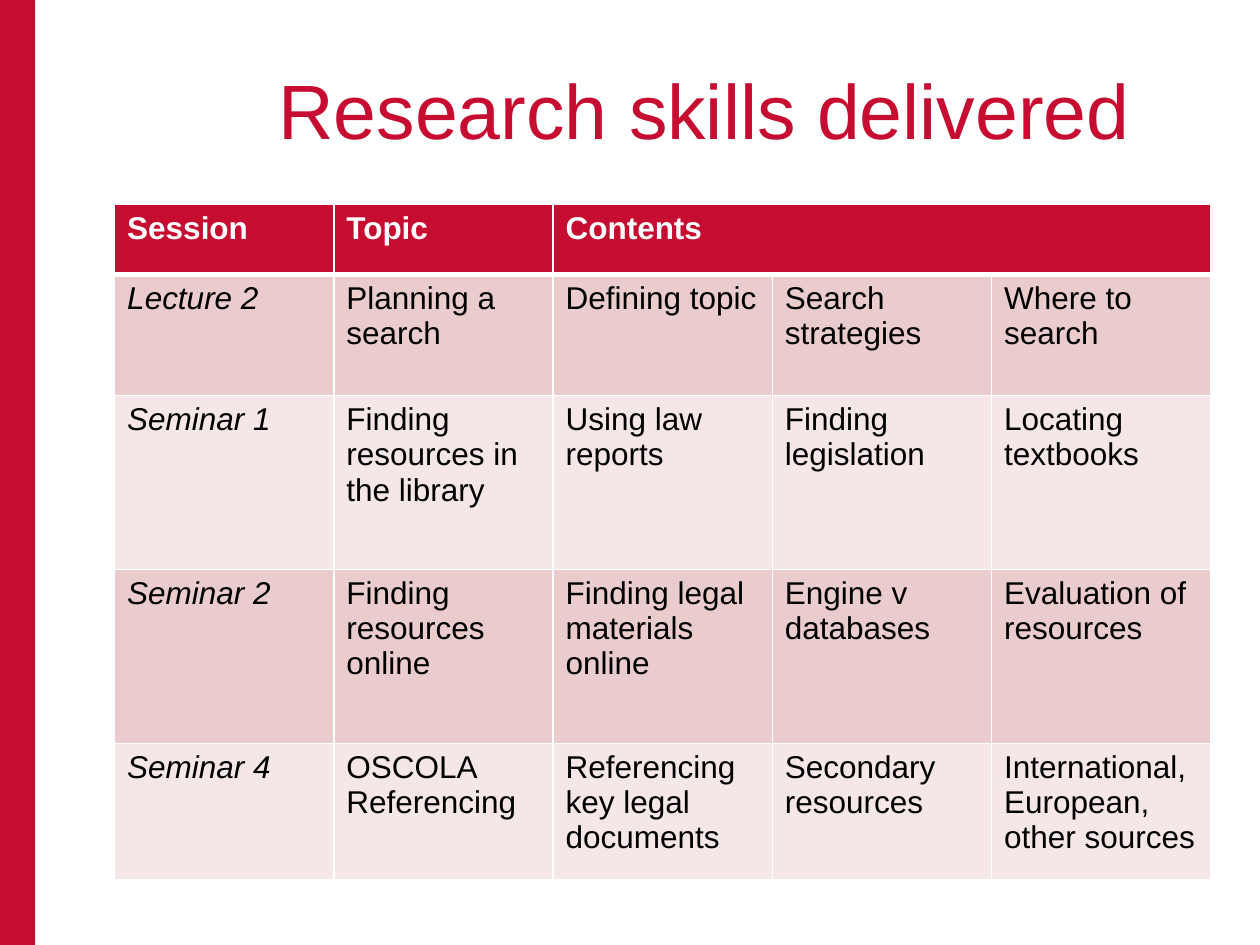
import pptx
import pptx.dml.color
import pptx.enum.shapes
import pptx.enum.text
import pptx.oxml.ns
import pptx.util
import lxml.etree

WIDTH, HEIGHT = 10, 7.5
FONT = "Arial"
COLORS = {"red": "C60C30", "pink": "EACCCD", "pale": "F5E7E8", "white": "FFFFFF", "black": "000000"}
ROW_HEIGHTS = [0.56, 0.96, 1.38, 1.38, 1.08]
SESSIONS = [
    ["Session", "Topic", "Contents", "", ""],
    ["Lecture 2", "Planning a search", "Defining topic", "Search strategies", "Where to search"],
    ["Seminar 1", "Finding resources in the library", "Using law reports",
     "Finding legislation", "Locating textbooks"],
    ["Seminar 2", "Finding resources online", "Finding legal materials online",
     "Engine v databases", "Evaluation of resources"],
    ["Seminar 4", "OSCOLA Referencing", "Referencing key legal documents",
     "Secondary resources", "International, European, other sources"],
]


def color(name):
    """Return the named colour."""
    return pptx.dml.color.RGBColor.from_string(COLORS[name])


def inches(box):
    """Convert a box in inches to slide lengths."""
    return [pptx.util.Inches(length) for length in box]


def write(frame, text, size, ink, bold=False, italic=False):
    """Put one styled paragraph in a text frame."""
    frame.text = text
    for span in frame.paragraphs[0].runs:
        span.font.name = FONT
        span.font.size = pptx.util.Pt(size)
        span.font.bold = bold
        span.font.italic = italic
        span.font.color.rgb = color(ink)


def add_side_bar(page, box):
    """Draw the solid band along the slide edge."""
    bar = page.shapes.add_shape(pptx.enum.shapes.MSO_SHAPE.RECTANGLE, *inches(box))
    bar.shadow.inherit = False
    bar.fill.solid()
    bar.fill.fore_color.rgb = color("red")
    bar.line.fill.background()


def add_title(page, box):
    """Place the slide title, centred vertically in its box."""
    frame = page.shapes.add_textbox(*inches(box)).text_frame
    frame.word_wrap = True
    frame.vertical_anchor = pptx.enum.text.MSO_ANCHOR.MIDDLE
    write(frame, "Research skills delivered", 44, "red")


def set_borders(cell, bottom, top):
    """Give a cell white borders with the given bottom and top widths."""
    properties = cell._tc.get_or_add_tcPr()
    widths = {"lnL": 1, "lnR": 1, "lnT": top, "lnB": bottom}
    for position, (side, width) in enumerate(widths.items()):
        line = lxml.etree.Element(pptx.oxml.ns.qn("a:" + side), w=str(pptx.util.Pt(width)))
        fill = lxml.etree.SubElement(line, pptx.oxml.ns.qn("a:solidFill"))
        lxml.etree.SubElement(fill, pptx.oxml.ns.qn("a:srgbClr"), val=COLORS["white"])
        properties.insert(position, line)


def add_sessions_table(page, box):
    """Build the banded table of sessions, with equal columns."""
    columns = len(SESSIONS[0])
    table = page.shapes.add_table(len(SESSIONS), columns, *inches(box)).table
    for column in table.columns:
        column.width = pptx.util.Inches(box[2] / columns)
    for row, (height, texts) in enumerate(zip(ROW_HEIGHTS, SESSIONS)):
        table.rows[row].height = pptx.util.Inches(height)
        header = row == 0
        band = "red" if header else ("pale", "pink")[row % 2]
        for column, text in enumerate(texts):
            cell = table.cell(row, column)
            cell.fill.solid()
            cell.fill.fore_color.rgb = color(band)
            set_borders(cell, 3 if header else 1, 3 if row == 1 else 1)
            write(cell.text_frame, text, 18, "white" if header else "black",
                  bold=header, italic=column == 0 and not header)
    table.cell(0, 2).merge(table.cell(0, columns - 1))


def main():
    """Build and save the deck."""
    deck = pptx.Presentation()
    deck.slide_width, deck.slide_height = inches((WIDTH, HEIGHT))
    page = deck.slides.add_slide(deck.slide_layouts[6])
    add_side_bar(page, (0, 0, 0.028 * WIDTH, HEIGHT))
    add_sessions_table(page, (0.091 * WIDTH, 0.216 * HEIGHT, 0.87 * WIDTH, sum(ROW_HEIGHTS)))
    add_title(page, (0.211 * WIDTH, 0.048 * HEIGHT, 0.789 * WIDTH, 0.135 * HEIGHT))
    deck.save("out.pptx")


if __name__ == "__main__":
    main()
